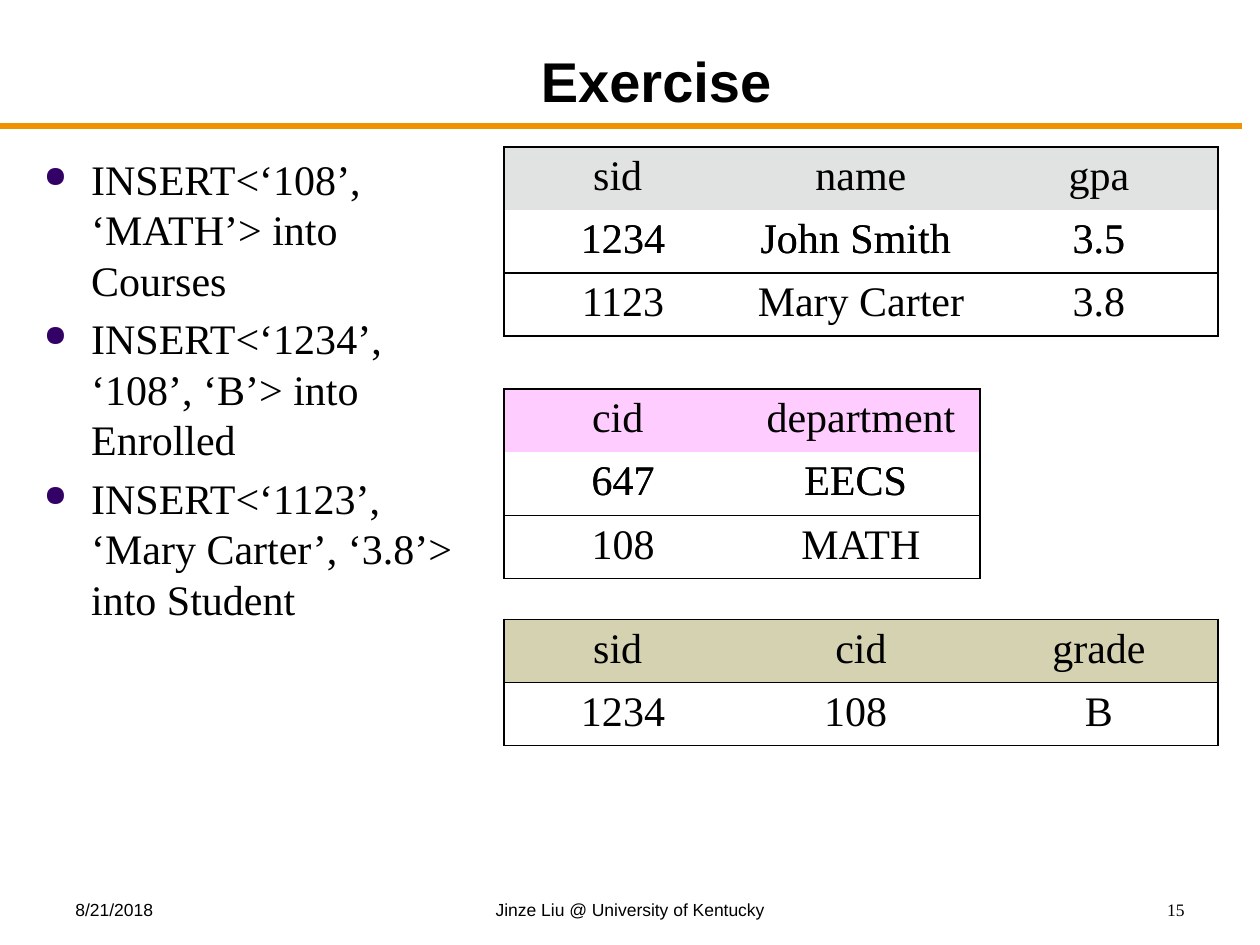
from lxml import etree
from pptx import Presentation, util as u
from pptx.dml.color import RGBColor
from pptx.enum import shapes, text
from pptx.oxml.ns import qn

Pt = u.Pt
SERIF, SANS = "Times New Roman", "Arial"
ALIGN = text.PP_ALIGN


def rgb(code):
    return RGBColor.from_string(code)


def write(paragraph, words, size, font, align=ALIGN.LEFT, bold=False):
    paragraph.alignment = align
    run = paragraph.add_run()
    run.text = words
    run.font.size, run.font.name, run.font.bold = Pt(size), font, bold
    run.font.color.rgb = rgb("000000")


deck = Presentation()
deck.slide_width, deck.slide_height = Pt(720), Pt(540)
slide = deck.slides.add_slide(deck.slide_layouts[5])

rule = slide.shapes.add_connector(
    shapes.MSO_CONNECTOR.STRAIGHT, Pt(0), Pt(72), Pt(710), Pt(72))
rule.line.color.rgb = rgb("EF9100")
rule.line.width = Pt(3)
etree.SubElement(rule._element.spPr, qn("a:effectLst"))

title = slide.shapes.title
title.left, title.top, title.width, title.height = Pt(78), Pt(18), Pt(594), Pt(50.4)
title.text_frame.vertical_anchor = text.MSO_ANCHOR.BOTTOM
title.text_frame.auto_size = text.MSO_AUTO_SIZE.NONE
write(title.text_frame.paragraphs[0], "Exercise", 32, SANS, ALIGN.CENTER, True)

tasks = slide.shapes.add_textbox(Pt(18), Pt(84), Pt(264), Pt(414)).text_frame
tasks.word_wrap = True
for number, task in enumerate([
        "INSERT<‘108’, ‘MATH’> into Courses",
        "INSERT<‘1234’, ‘108’, ‘B’> into Enrolled",
        "INSERT<‘1123’, ‘Mary Carter’, ‘3.8’> into Student"]):
    item = tasks.add_paragraph() if number else tasks.paragraphs[0]
    write(item, task, 24, SERIF)
    item.space_before, item.line_spacing = Pt(4.8), Pt(28.8)
    props = item._p.get_or_add_pPr()
    props.set("marL", str(Pt(27)))
    props.set("indent", str(Pt(-27)))
    bullet_color = etree.SubElement(props, qn("a:buClr"))
    etree.SubElement(bullet_color, qn("a:srgbClr"), val="330066")
    etree.SubElement(props, qn("a:buSzPct"), val="70000")
    etree.SubElement(props, qn("a:buChar"), char="●")

for left, width, words, font, align in [
        (36, 168, "8/21/2018", SANS, ALIGN.LEFT),
        (246, 228, "Jinze Liu @ University of Kentucky", SANS, ALIGN.CENTER),
        (516, 168, "15", SERIF, ALIGN.RIGHT)]:
    footer = slide.shapes.add_textbox(Pt(left), Pt(510), Pt(width), Pt(18)).text_frame
    footer.word_wrap = True
    write(footer.paragraphs[0], words, 10, font, align)

students = (84, "E1E3E3", [["sid ", "name", "gpa"],
                           ["1234", "John Smith ", "3.5"],
                           ["1123", "Mary Carter ", "3.8"]])
courses = (222.4, "FFCCFF", [["cid ", "department"],
                             ["647", "EECS "],
                             ["108", "MATH"]])
enrolled = (354, "D4D2B0", [["sid ", "cid", "grade"],
                            ["1234", "108 ", "B"]])

for (top, header_fill, records), shown in [
        (students, 2), (courses, 3), (enrolled, 2),
        (courses, 2), (enrolled, 1), (students, 3)]:
    fields = len(records[0])
    relation = slide.shapes.add_table(
        shown, fields, Pt(288), Pt(top), Pt(136 * fields), Pt(30 * shown)).table
    for r, record in enumerate(records[:shown]):
        for c, value in enumerate(record):
            cell = relation.cell(r, c)
            entry = cell.text_frame.paragraphs[0]
            write(entry, value, 24, SERIF, ALIGN.CENTER)
            entry.space_before = Pt(4.8)
            outer_edges = {"L": c == 0, "R": c == fields - 1,
                           "T": r == 0, "B": r == shown - 1}
            for side, drawn in outer_edges.items():
                edge = etree.SubElement(
                    cell._tc.get_or_add_tcPr(), qn("a:ln" + side), w=str(Pt(1)))
                if drawn:
                    ink = etree.SubElement(edge, qn("a:solidFill"))
                    etree.SubElement(ink, qn("a:srgbClr"), val="000000")
                else:
                    etree.SubElement(edge, qn("a:noFill"))
            if r == 0:
                cell.fill.solid()
                cell.fill.fore_color.rgb = rgb(header_fill)
            else:
                cell.fill.background()

deck.save("out.pptx")
